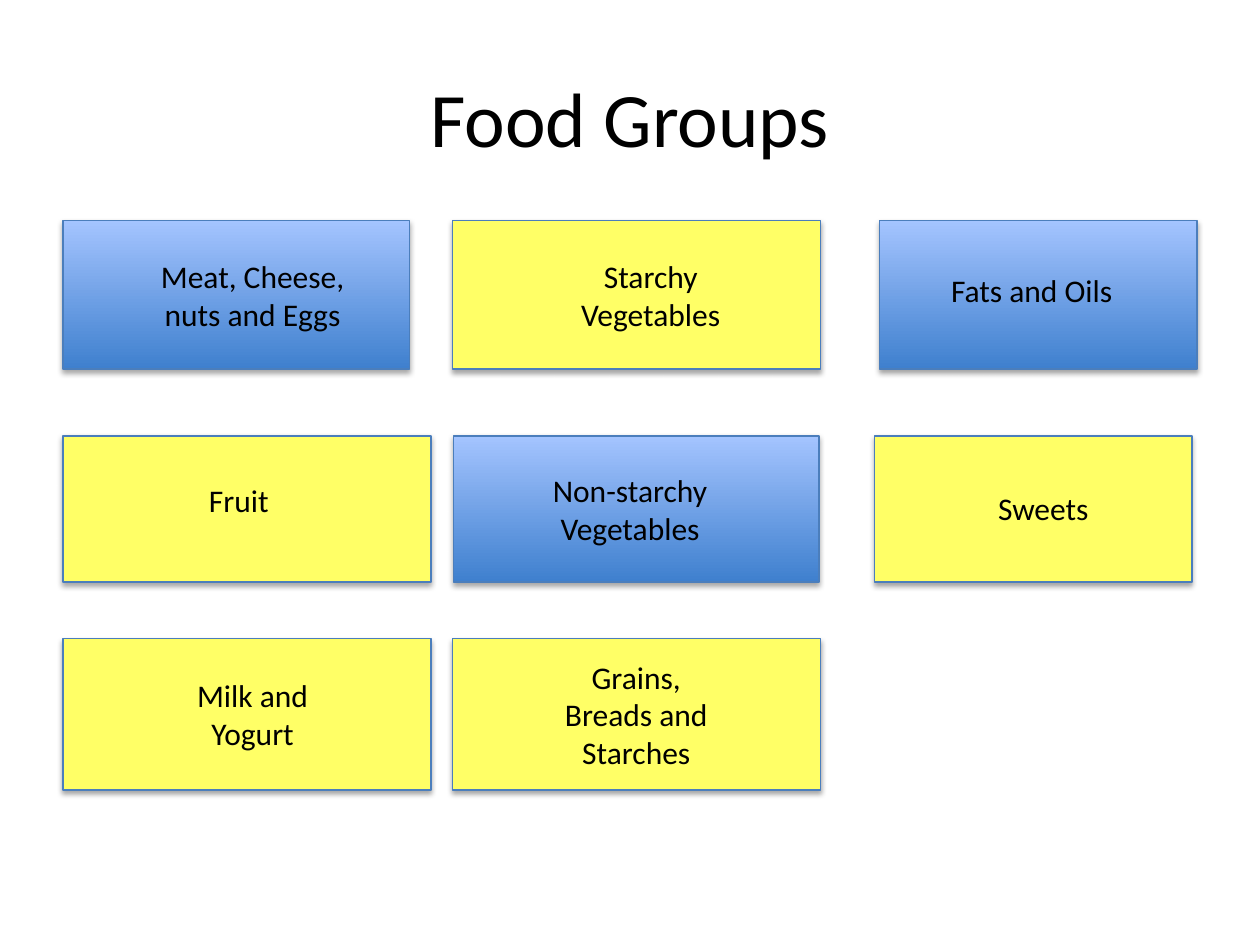
from lxml import etree
from pptx import Presentation
from pptx.dml.color import RGBColor
from pptx.enum.shapes import MSO_SHAPE
from pptx.enum.text import MSO_ANCHOR, MSO_AUTO_SIZE, PP_ALIGN
from pptx.oxml import parse_xml
from pptx.util import Inches, Pt

RECTANGLE = MSO_SHAPE.RECTANGLE
MIDDLE = MSO_ANCHOR.MIDDLE
FIT_SHAPE = MSO_AUTO_SIZE.SHAPE_TO_FIT_TEXT
CENTER, LEFT = PP_ALIGN.CENTER, PP_ALIGN.LEFT

FONT = "Calibri"
BLACK, YELLOW, OUTLINE = "000000", "FFFF66", "4B7EBC"
BLUE = ("3F80CE", "A4C4FF")  # bottom, top of the gradient
LINE_HEIGHT, TEXT_PADDING = 0.3, 0.1

ROWS = [(1.75, 1.18), (3.46, 1.16), (5.07, 1.2)]  # top, height

# row, card (left, width), fill, label, lines, label (left, top, width), alignment
FOOD_GROUPS = [
    (0, (0.5, 2.75), BLUE, "Meat, Cheese, nuts and Eggs", 2, (0.94, 1.99, 2.13), CENTER),
    (0, (3.59, 2.92), YELLOW, "Starchy Vegetables", 2, (4.4, 1.99, 1.53), CENTER),
    (0, (6.98, 2.52), BLUE, "Fats and Oils", 1, (7.45, 2.1, 1.66), LEFT),
    (1, (0.5, 2.92), YELLOW, "Fruit", 1, (0.94, 3.77, 1.91), CENTER),
    (1, (3.6, 2.9), BLUE, "Non-starchy Vegetables", 2, (4.19, 3.69, 1.62), CENTER),
    (1, (6.94, 2.52), YELLOW, "Sweets", 1, (7.59, 3.83, 1.38), CENTER),
    (2, (0.5, 2.92), YELLOW, "Milk and Yogurt", 2, (1.29, 5.32, 1.43), CENTER),
    (2, (3.59, 2.92), YELLOW, "Grains, Breads and Starches", 3, (4.25, 5.17, 1.6), CENTER),
]

NAMESPACE = "http://schemas.openxmlformats.org/drawingml/2006/main"
SHADOW = (
    f'<a:outerShdw xmlns:a="{NAMESPACE}" blurRad="{Pt(3.1)}" dist="{Pt(1.8)}" '
    'dir="5400000" rotWithShape="0"><a:srgbClr val="000000">'
    '<a:alpha val="35000"/></a:srgbClr></a:outerShdw>'
)


def color(value):
    return RGBColor.from_string(value)


def write(frame, text, size, alignment):
    frame.text = text
    paragraph = frame.paragraphs[0]
    paragraph.alignment = alignment
    paragraph.font.name = FONT
    paragraph.font.size = Pt(size)
    paragraph.font.color.rgb = color(BLACK)


def add_card(slide, box, fill):
    card = slide.shapes.add_shape(RECTANGLE, *map(Inches, box))
    if fill == BLUE:
        card.fill.gradient()
        card.fill.gradient_angle = 90
        for stop, shade in zip(card.fill.gradient_stops, BLUE):
            stop.color.rgb = color(shade)
    else:
        card.fill.solid()
        card.fill.fore_color.rgb = color(fill)
    card.line.color.rgb = color(OUTLINE)
    card.line.width = Pt(0.75)
    card.shadow.inherit = False
    effects = card.element.spPr.find(etree.QName(NAMESPACE, "effectLst").text)
    effects.append(parse_xml(SHADOW))


def add_label(slide, box, text, alignment):
    frame = slide.shapes.add_textbox(*map(Inches, box)).text_frame
    frame.word_wrap = True
    frame.auto_size = FIT_SHAPE
    write(frame, text, 18, alignment)


def main():
    deck = Presentation()
    deck.slide_width, deck.slide_height = Inches(10), Inches(7.5)
    slide = deck.slides.add_slide(deck.slide_layouts[5])

    title = slide.shapes.title
    title.left, title.top, title.width, title.height = map(Inches, (0.5, 0.3, 9, 1.25))
    title.text_frame.vertical_anchor = MIDDLE
    write(title.text_frame, "Food Groups", 44, CENTER)

    for row, (left, width), fill, text, lines, label, alignment in FOOD_GROUPS:
        top, height = ROWS[row]
        add_card(slide, (left, top, width, height), fill)
        label_height = lines * LINE_HEIGHT + TEXT_PADDING
        add_label(slide, (*label, label_height), text, alignment)

    deck.save("out.pptx")


if __name__ == "__main__":
    main()
